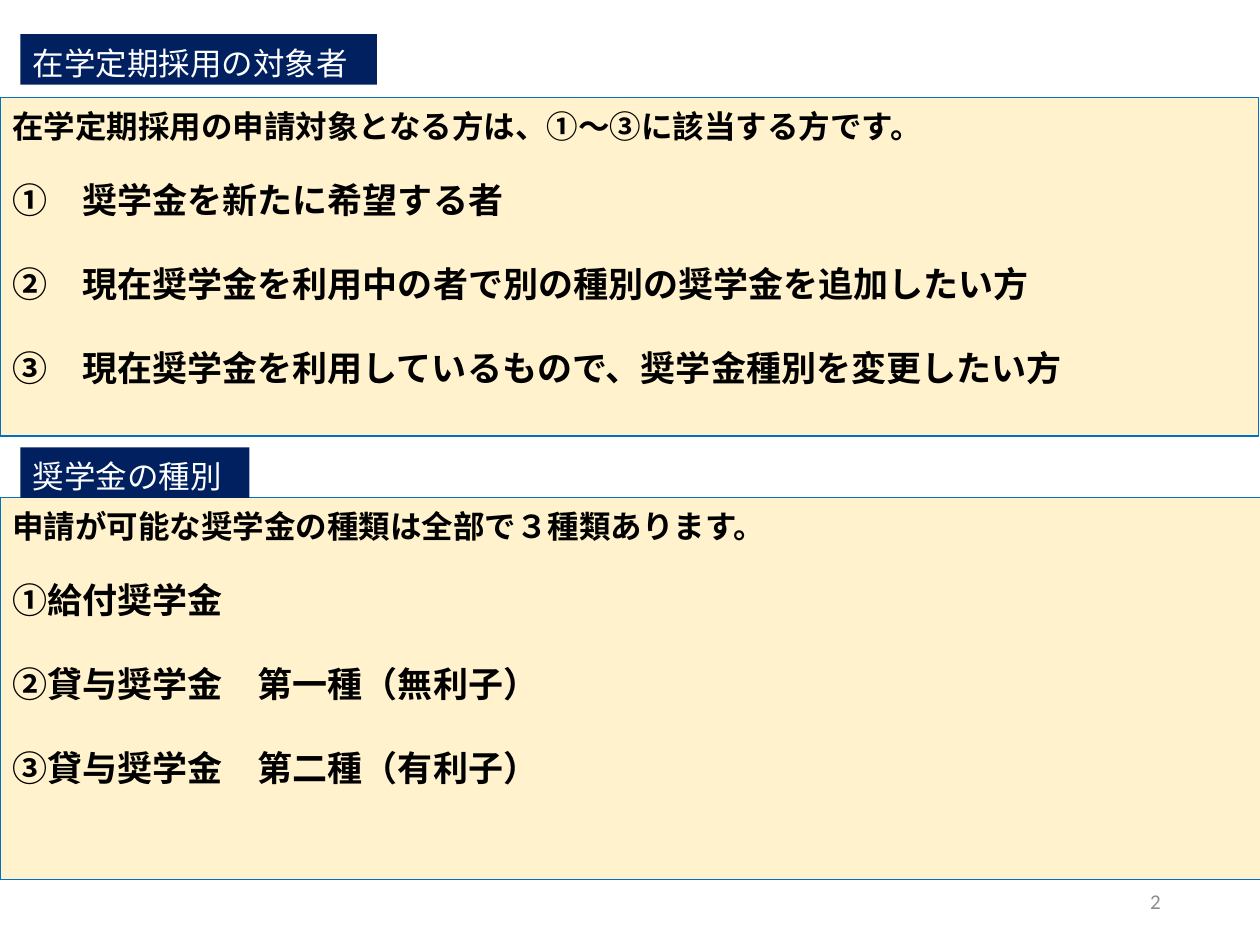
"""Build the slide on who may apply for scholarships and which kinds exist."""
from lxml import etree
from pptx import Presentation
from pptx import util as u
from pptx.dml.color import RGBColor
from pptx.enum import shapes, text
from pptx.oxml.ns import qn

NAVY = RGBColor(0x00, 0x20, 0x60)
BLUE = RGBColor(0x00, 0x70, 0xC0)
CREAM = RGBColor(0xFF, 0xF2, 0xCC)
WHITE = RGBColor(0xFF, 0xFF, 0xFF)
BLACK = RGBColor(0x00, 0x00, 0x00)
GREY = RGBColor(0x8C, 0x8C, 0x8C)
JAPANESE = "Noto Sans CJK JP"
LINE_HEIGHT = 1.2


def add_box(page, left, top, width, height, fill):
    box = page.shapes.add_shape(
        shapes.MSO_SHAPE.RECTANGLE, u.Cm(left), u.Cm(top), u.Cm(width), u.Cm(height))
    box.shadow.inherit = False
    box.fill.solid()
    box.fill.fore_color.rgb = fill
    box.line.fill.background()
    frame = box.text_frame
    frame.word_wrap = True
    frame.vertical_anchor = text.MSO_ANCHOR.TOP
    frame.margin_top = u.Cm(0.19)
    frame.margin_bottom = u.Cm(0)
    return box


def write_line(para, wording, size, color, bold=False, gap=0):
    para.alignment = text.PP_ALIGN.LEFT
    para.line_spacing = u.Pt(size * LINE_HEIGHT)
    para.space_before = u.Pt(gap * LINE_HEIGHT)
    span = para.add_run()
    span.text = wording
    span.font.name = JAPANESE
    span.font.size = u.Pt(size)
    span.font.bold = bold
    span.font.color.rgb = color
    east_asian = etree.SubElement(span._r.get_or_add_rPr(), qn("a:ea"))
    east_asian.set("typeface", JAPANESE)


deck = Presentation()
deck.slide_width = u.Cm(25.4)
deck.slide_height = u.Cm(19.05)
page = deck.slides.add_slide(deck.slide_layouts[6])

number = page.shapes.add_textbox(u.Cm(17.93), u.Cm(17.65), u.Cm(5.72), u.Cm(1.02))
number.text_frame.word_wrap = True
number.text_frame.vertical_anchor = text.MSO_ANCHOR.MIDDLE
para = number.text_frame.paragraphs[0]
para.alignment = text.PP_ALIGN.RIGHT
span = para.add_run()
span.text = "2"
span.font.name = "Calibri"
span.font.size = u.Pt(12)
span.font.color.rgb = GREY

sections = [
    ("在学定期採用の対象者", (0.41, 0.69, 7.19, 1.02), (0, 1.96, 25.37, 6.83),
     "在学定期採用の申請対象となる方は、①～③に該当する方です。",
     ["①　奨学金を新たに希望する者",
      "②　現在奨学金を利用中の者で別の種別の奨学金を追加したい方",
      "③　現在奨学金を利用しているもので、奨学金種別を変更したい方"]),
    ("奨学金の種別", (0.41, 9.02, 4.62, 1.02), (0, 10.03, 25.45, 7.7),
     "申請が可能な奨学金の種類は全部で３種類あります。",
     ["①給付奨学金",
      "②貸与奨学金　第一種（無利子）",
      "③貸与奨学金　第二種（有利子）"]),
]

for heading, heading_area, panel_area, intro, items in sections:
    panel = add_box(page, *panel_area, CREAM)
    panel.line.color.rgb = BLUE
    panel.line.width = u.Pt(0.75)
    frame = panel.text_frame
    write_line(frame.paragraphs[0], intro, 18, BLACK, bold=True)
    for item, gap in zip(items, (16, 20, 20)):
        write_line(frame.add_paragraph(), item, 20, BLACK, bold=True, gap=gap)

    label = add_box(page, *heading_area, NAVY)
    write_line(label.text_frame.paragraphs[0], heading, 18, WHITE)

deck.save("out.pptx")
